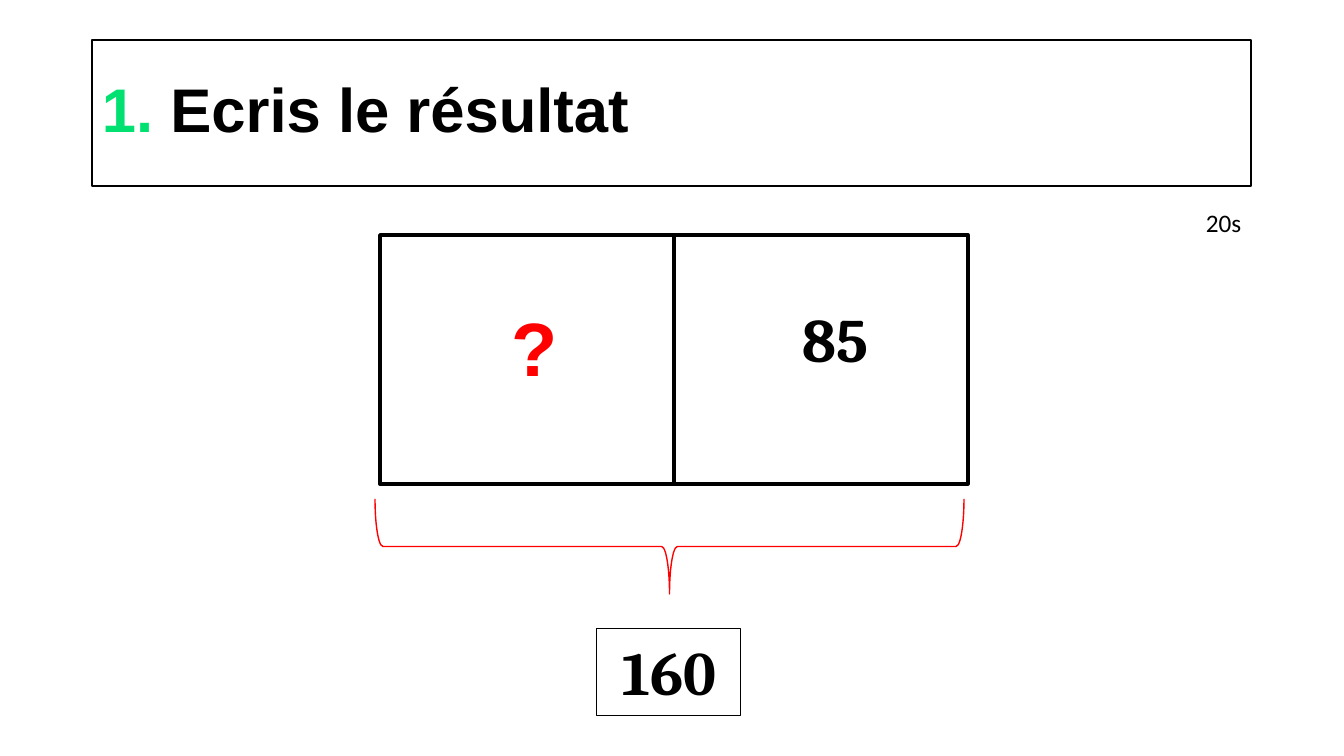
from pptx import Presentation
from pptx.dml.color import RGBColor
from pptx.enum.shapes import MSO_SHAPE as SHAPE
from pptx.enum.text import MSO_ANCHOR as ANCHOR, PP_ALIGN as ALIGN
from pptx.util import Emu, Pt

WIDTH, HEIGHT = 1344, 756
SCALE = 12192000 / WIDTH
COLORS = {"black": "000000", "green": "00E172", "red": "FF0000"}


def px(n):
    return Emu(round(n * SCALE))


def color(name):
    return RGBColor.from_string(COLORS[name])


class Board:
    """Holds the style and the current slide."""

    def __init__(self, prs):
        self.slide = prs.slides.add_slide(prs.slide_layouts[6])

    def outline(self, box, line_pt, line="black", kind=SHAPE.RECTANGLE):
        sp = self.slide.shapes.add_shape(kind, *map(px, box))
        sp.shadow.inherit = False
        sp.fill.background()
        sp.line.color.rgb = color(line)
        sp.line.width = Pt(line_pt)
        return sp

    def brace_below(self, left, top, width, height):
        # A right brace turned a quarter, around the same centre
        shift = (width - height) // 2
        box = (left + shift, top - shift, height, width)
        sp = self.outline(box, 1, "red", SHAPE.RIGHT_BRACE)
        sp.rotation = 90

    def text(self, box, runs, size, font, align=ALIGN.CENTER,
             anchor=ANCHOR.TOP, bold=True, wrap=True, spacing=1.0):
        sp = self.slide.shapes.add_textbox(*map(px, box))
        tf = sp.text_frame
        tf.word_wrap = wrap
        tf.vertical_anchor = anchor
        p = tf.paragraphs[0]
        p.alignment = align
        p.line_spacing = spacing
        for words, ink in runs:
            r = p.add_run()
            r.text = words
            r.font.name = font
            r.font.size = Pt(size)
            r.font.bold = bold
            r.font.color.rgb = color(ink)
        return sp


def main():
    prs = Presentation()
    prs.slide_width, prs.slide_height = px(WIDTH), px(HEIGHT)
    board = Board(prs)

    # Title
    title = board.text((92, 40, 1159, 146),
                       [("1. ", "green"), ("Ecris le résultat", "black")],
                       44, "Arial", ALIGN.LEFT, ANCHOR.MIDDLE, spacing=0.9)
    title.line.color.rgb = color("black")
    title.line.width = Pt(1.5)

    # Bar model: two equal parts
    left, top, part_w, part_h = 380, 235, 294, 249
    for i in range(2):
        board.outline((left + i * part_w, top, part_w, part_h), 2.5)
    board.text((456, 296, 157, 102), [("?", "red")], 54, "Arial")
    board.text((763, 296, 144, 87), [("85", "black")], 44, "Cambria")

    # Brace and total
    board.brace_below(375, 499, 589, 95)
    total = board.text((597, 629, 144, 87), [("160", "black")], 44, "Cambria")
    total.line.color.rgb = color("black")
    total.line.width = Pt(0.75)

    # Time limit
    board.text((1196, 202, 56, 40), [("20s", "black")], 18, "Calibri",
               ALIGN.LEFT, bold=False, wrap=False)

    prs.save("out.pptx")


if __name__ == "__main__":
    main()
